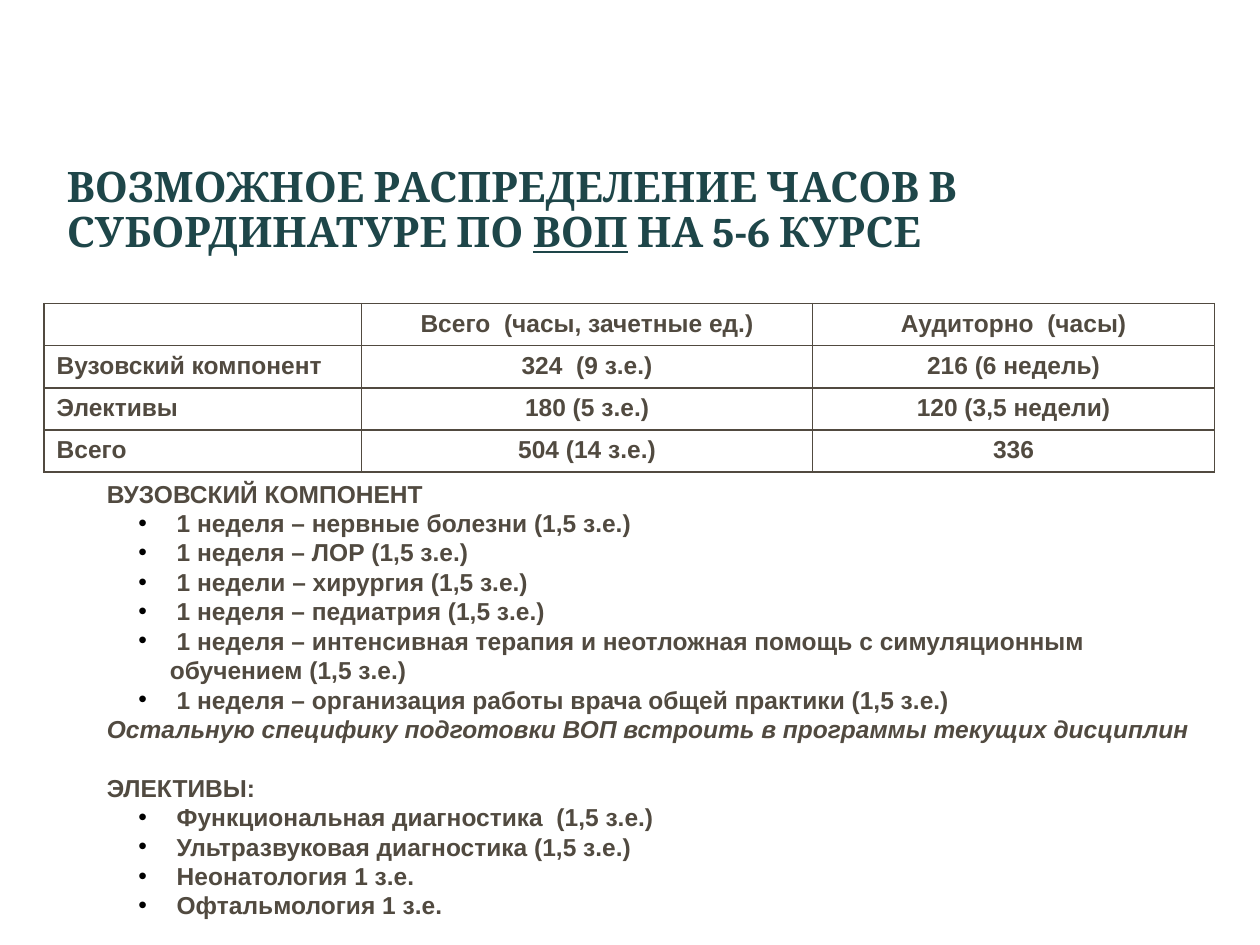
from dataclasses import dataclass

from lxml.etree import SubElement as Sub
from pptx import Presentation as Deck
from pptx.dml.color import RGBColor as Rgb
from pptx.enum.text import MSO_ANCHOR as Anchor, MSO_AUTO_SIZE as Fit, PP_ALIGN as Align
from pptx.oxml.ns import qn
from pptx.util import Inches, Pt


@dataclass(frozen=True)
class Theme:
    head: str = "1E4649"
    ink: str = "514A40"
    dot: str = "000000"
    paper: str = "FFFFFF"
    serif: str = "Cambria"
    sans: str = "Arial"
    big: int = 24
    small: int = 14
    gap: float = 16.8  # one line of small text


class Page:
    """Style and current slide; lengths are cells of a 100 x 75 grid."""

    def __init__(self, deck, theme):
        self.theme = theme
        self.unit = deck.slide_width / 100
        self.slide = deck.slides.add_slide(deck.slide_layouts[5])

    def span(self, *cells):
        return [round(cell * self.unit) for cell in cells]

    def run(self, para, text, size, face, color, under=False, slant=False):
        run = para.add_run()
        run.text = text
        font = run.font
        font.size, font.name, font.bold = Pt(size), face, True
        font.color.rgb = Rgb.from_string(color)
        if under:
            font.underline = True
        if slant:
            font.italic = True

    def plain(self, para, text, slant=False):
        look = self.theme
        self.run(para, text, look.small, look.sans, look.ink, slant=slant)

    def title(self, box, parts):
        look, shape = self.theme, self.slide.shapes.title
        shape.left, shape.top, shape.width, shape.height = self.span(*box)
        frame = shape.text_frame
        frame.auto_size, frame.word_wrap = Fit.NONE, True
        frame.vertical_anchor = Anchor.BOTTOM
        para = frame.paragraphs[0]
        para.alignment, para.line_spacing = Align.LEFT, 0.9
        for text, under in parts:
            self.run(para, text, look.big, look.serif, look.head, under=under)

    def bullet(self, para):
        para.level = 1
        props = para._p.get_or_add_pPr()
        props.set("marL", str(Inches(0.5)))
        props.set("indent", str(Inches(-0.25)))
        tint = Sub(props, qn("a:buClr"))
        Sub(tint, qn("a:srgbClr"), val=self.theme.dot)
        Sub(props, qn("a:buFont"), typeface=self.theme.sans)
        Sub(props, qn("a:buChar"), char="•")

    def text(self, box, lines):
        frame = self.slide.shapes.add_textbox(*self.span(*box)).text_frame
        frame.word_wrap, frame.auto_size = True, Fit.SHAPE_TO_FIT_TEXT
        for index, (kind, text) in enumerate(lines):
            para = frame.add_paragraph() if index else frame.paragraphs[0]
            if kind == "item":
                self.bullet(para)
                text = " " + text
            elif kind == "head" and index:
                para.space_before = Pt(self.theme.gap)
            self.plain(para, text, slant=kind == "note")

    def border(self, cell):
        props = cell._tc.get_or_add_tcPr()
        for side in ("lnL", "lnR", "lnT", "lnB"):
            line = Sub(props, qn(f"a:{side}"), w=str(Pt(1)))
            fill = Sub(line, qn("a:solidFill"))
            Sub(fill, qn("a:srgbClr"), val=self.theme.ink)

    def table(self, left, top, cols, high, rows):
        box = self.span(left, top, sum(cols), high * len(rows))
        grid = self.slide.shapes.add_table(len(rows), len(cols), *box).table
        for col, width in zip(grid.columns, self.span(*cols)):
            col.width = width
        for row, texts in zip(grid.rows, rows):
            row.height = self.span(high)[0]
            for index, (cell, text) in enumerate(zip(row.cells, texts)):
                self.border(cell)
                cell.fill.solid()
                cell.fill.fore_color.rgb = Rgb.from_string(self.theme.paper)
                para = cell.text_frame.paragraphs[0]
                para.alignment = Align.CENTER if index else Align.LEFT
                if text:
                    self.plain(para, text)
                else:  # keeps the empty cell as low as its row
                    Sub(para._p, qn("a:endParaRPr"), sz=str(self.theme.small * 100))


TITLE = [
    ("ВОЗМОЖНОЕ РАСПРЕДЕЛЕНИЕ ЧАСОВ В СУБОРДИНАТУРЕ ПО ", False),
    ("ВОП", True),
    (" НА 5-6 КУРСЕ", False),
]
HOURS = [
    ("", "Всего  (часы, зачетные ед.)", "Аудиторно  (часы)"),
    ("Вузовский компонент", "324  (9 з.е.)", "216 (6 недель)"),
    ("Элективы", "180 (5 з.е.)", "120 (3,5 недели)"),
    ("Всего", "504 (14 з.е.)", "336"),
]
PLAN = [
    ("head", "ВУЗОВСКИЙ КОМПОНЕНТ"),
    ("item", "1 неделя – нервные болезни (1,5 з.е.)"),
    ("item", "1 неделя – ЛОР (1,5 з.е.)"),
    ("item", "1 недели – хирургия (1,5 з.е.)"),
    ("item", "1 неделя – педиатрия (1,5 з.е.)"),
    ("item", "1 неделя – интенсивная терапия и неотложная помощь"
             " с симуляционным обучением (1,5 з.е.)"),
    ("item", "1 неделя – организация работы врача общей практики (1,5 з.е.)"),
    ("note", "Остальную специфику подготовки ВОП встроить в программы текущих дисциплин"),
    ("head", "ЭЛЕКТИВЫ:"),
    ("item", "Функциональная диагностика  (1,5 з.е.)"),
    ("item", "Ультразвуковая диагностика (1,5 з.е.)"),
    ("item", "Неонатология 1 з.е."),
    ("item", "Офтальмология 1 з.е."),
]


def main():
    deck = Deck()
    deck.slide_width, deck.slide_height = Inches(10), Inches(7.5)
    page = Page(deck, Theme())

    # Heading
    page.title((4.3, 10.7, 90, 10.2), TITLE)
    # Course plan
    page.text((7.5, 37.5, 88.3, 36.4), PLAN)
    # Hours by component
    page.table(3.5, 24.1, (25.2, 35.8, 31.9), 3.33, HOURS)

    deck.save("out.pptx")


if __name__ == "__main__":
    main()
